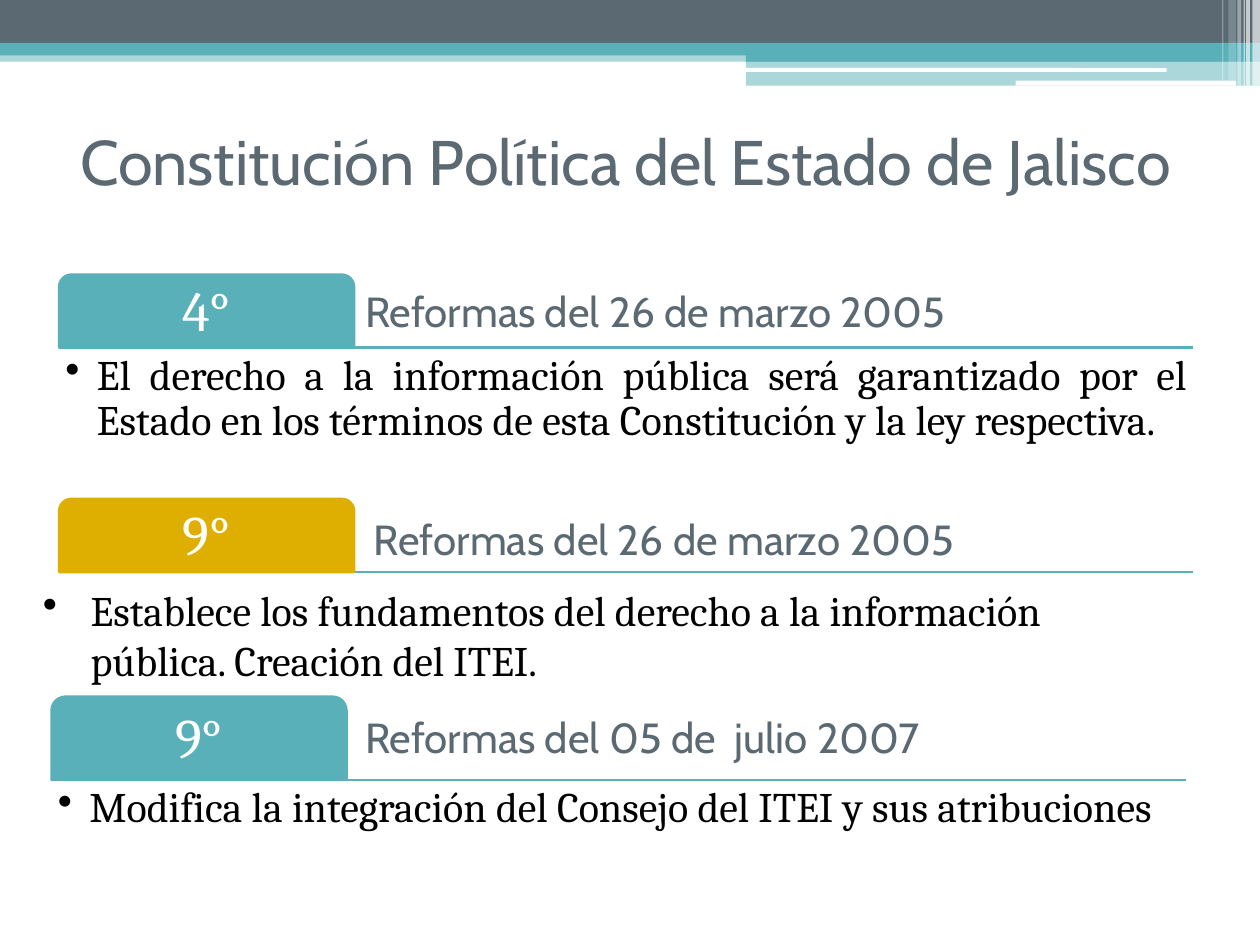
from dataclasses import dataclass

from lxml.etree import SubElement
from pptx import Presentation
from pptx.dml.color import RGBColor
from pptx.enum.shapes import MSO_CONNECTOR, MSO_SHAPE
from pptx.enum.text import MSO_ANCHOR, PP_ALIGN
from pptx.oxml.ns import qn
from pptx.util import Inches, Pt


@dataclass(frozen=True)
class Theme:
    teal: str = "59B0B9"
    gold: str = "DEAE00"
    slate: str = "5B6973"
    white: str = "FFFFFF"
    black: str = "000000"
    head: str = "Cabin"
    body: str = "Cambria"
    title: int = 36
    label: int = 32
    text: int = 24
    rule: float = 1.5


class Deck:
    def __init__(self, theme, slide):
        self.theme = theme
        self.slide = slide

    def shape(self, kind, box, color, alpha=100, adjust=()):
        item = self.slide.shapes.add_shape(kind, *map(Inches, box))
        item.shadow.inherit = False
        item.fill.solid()
        item.fill.fore_color.rgb = RGBColor.from_string(color)
        item.line.fill.background()
        for spot, value in enumerate(adjust):
            item.adjustments[spot] = value
        if alpha < 100:
            tint = item._element.spPr.find(".//" + qn("a:srgbClr"))
            SubElement(tint, qn("a:alpha"), val=str(alpha * 1000))
        return item

    def band(self, box, color, alpha=100):
        return self.shape(MSO_SHAPE.RECTANGLE, box, color, alpha)

    def pill(self, box):
        self.shape(MSO_SHAPE.ROUNDED_RECTANGLE, box, self.theme.white, adjust=[0.167])

    def rule(self, left, top, width):
        ends = map(Inches, (left, top, left + width, top))
        line = self.slide.shapes.add_connector(MSO_CONNECTOR.STRAIGHT, *ends)
        line.line.color.rgb = RGBColor.from_string(self.theme.teal)
        line.line.width = Pt(self.theme.rule)
        SubElement(line._element.spPr, qn("a:effectLst"))

    def letter(self, item, text, font, size, color, align=PP_ALIGN.LEFT,
               anchor=MSO_ANCHOR.TOP, inset=(0.1, 0.05), space=1.0, hang=0):
        """Fill a shape with one paragraph; hang is the bullet indent."""
        frame = item.text_frame
        frame.word_wrap = True
        frame.vertical_anchor = anchor
        frame.margin_left = frame.margin_right = Inches(inset[0])
        frame.margin_top = frame.margin_bottom = Inches(inset[1])
        para = frame.paragraphs[0]
        para.text = text
        para.alignment = align
        para.line_spacing = space
        if hang:
            props = para._p.get_or_add_pPr()
            props.set("marL", str(Inches(hang)))
            props.set("indent", str(-Inches(hang)))
            SubElement(props, qn("a:buChar"), char="•")
        for run in para.runs:
            run.font.name = font
            run.font.size = Pt(size)
            run.font.color.rgb = RGBColor.from_string(color)

    def label(self, box, text, font, size, color, **style):
        item = self.slide.shapes.add_textbox(*map(Inches, box))
        self.letter(item, text, font, size, color, **style)

    def title(self, box, text):
        look = self.theme
        self.label(box, text, look.head, look.title, look.slate,
                   align=PP_ALIGN.CENTER, anchor=MSO_ANCHOR.MIDDLE)

    def tab(self, box, text, color):
        look = self.theme
        item = self.shape(MSO_SHAPE.ROUND_2_SAME_RECTANGLE, box, color,
                          adjust=[0.167, 0])
        item.line.color.rgb = RGBColor.from_string(color)
        item.line.width = Pt(look.rule)
        self.letter(item, text, look.body, look.label, look.white,
                    align=PP_ALIGN.CENTER, anchor=MSO_ANCHOR.MIDDLE,
                    inset=(0.07, 0), space=0.9)

    def head(self, left, top, text):
        look = self.theme
        self.label((left, top, 5.83, 0.71), text, look.head, look.text, look.slate)

    def point(self, box, text, **style):
        look = self.theme
        self.label(box, text, look.body, look.text, look.black, **style)


def banner(deck):
    look = deck.theme
    deck.band((0, 0.4, 10, 0.09), look.teal, 50)
    deck.band((0, 0, 10, 0.34), look.slate)
    deck.band((0, 0.34, 10, 0.1), look.teal)
    deck.band((5.92, 0.39, 4.08, 0.1), look.teal)
    deck.band((5.92, 0.48, 4.08, 0.2), look.teal, 50)
    deck.pill((5.91, 0.54, 3.35, 0.03))
    deck.pill((8.06, 0.64, 1.75, 0.04))
    stripes = [(9.94, 0.06, 0.68, 65), (9.89, 0.03, 0.68, 65),
               (9.87, 0.01, 0.68, 60), (9.82, 0.03, 0.68, 40),
               (9.75, 0.06, 0.64, 20), (9.7, 0.01, 0.64, 30)]
    for left, width, height, alpha in stripes:
        deck.band((left, 0, width, height), look.white, alpha)


def main():
    show = Presentation()
    show.slide_width, show.slide_height = Inches(10), Inches(7.5)
    look = Theme()
    deck = Deck(look, show.slides.add_slide(show.slide_layouts[6]))
    banner(deck)
    deck.title((0.43, 0.84, 9.07, 0.87), "Constitución Política del Estado de Jalisco")

    tight = dict(align=PP_ALIGN.JUSTIFY, inset=(0.05, 0.05), space=0.9, hang=0.25)
    loose = dict(inset=(0.06, 0.06), hang=0.38)
    # left, base line, tab height, colour, number, heading and its place, point and its box
    parts = [
        (0.47, 2.76, 0.58, look.teal, "4°",
         "Reformas del 26 de marzo 2005", (2.8, 2.22),
         "El derecho a la información pública será garantizado por el Estado "
         "en los términos de esta Constitución y la ley respectiva.",
         (0.47, 2.76, 9, 1.17), tight),
        (0.47, 4.54, 0.58, look.gold, "9°",
         "Reformas del 26 de marzo 2005", (2.87, 4.03),
         "Establece los fundamentos del derecho a la información pública. "
         "Creación del ITEI.",
         (0.28, 4.58, 9, 0.87), loose),
        (0.41, 6.19, 0.66, look.teal, "9°",
         "Reformas del 05 de  julio 2007", (2.8, 5.6),
         "Modifica la integración del Consejo del ITEI y sus atribuciones",
         (0.41, 6.19, 9, 1.17), tight),
    ]
    for left, base, tall, color, mark, head, spot, text, box, style in parts:
        deck.rule(left, base, 9)
        deck.tab((left, base - tall, 2.34, tall), mark, color)
        deck.head(*spot, head)
        deck.point(box, text, **style)

    show.save("out.pptx")


if __name__ == "__main__":
    main()
